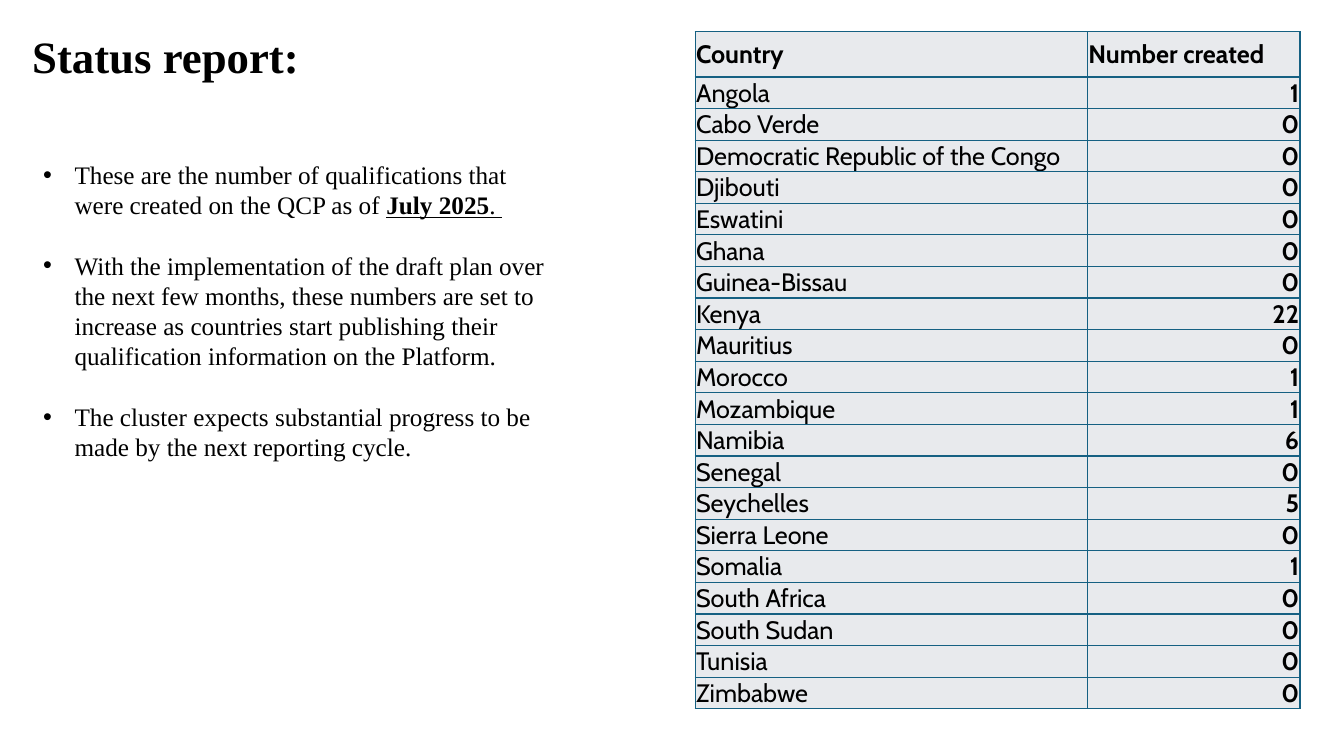
from dataclasses import dataclass
from lxml import etree
from pptx import Presentation
from pptx.dml.color import RGBColor
from pptx.enum import text as t
from pptx.oxml import ns
from pptx.util import Cm, Pt

HEADING = "Status report:"
POINTS = [
    [("These are the number of qualifications that were created on the QCP as of ", False, False),
     ("July 2025", True, True), (". ", False, True)],
    [("With the implementation of the draft plan over the next few months, these numbers "
      "are set to increase as countries start publishing their qualification information "
      "on the Platform.", False, False)],
    [("The cluster expects substantial progress to be made by the next reporting cycle.",
      False, False)],
]
COLUMNS = ("Country", "Number created")
CREATED = {
    "Angola": 1, "Cabo Verde": 0, "Democratic Republic of the Congo": 0, "Djibouti": 0,
    "Eswatini": 0, "Ghana": 0, "Guinea-Bissau": 0, "Kenya": 22, "Mauritius": 0,
    "Morocco": 1, "Mozambique": 1, "Namibia": 6, "Senegal": 0, "Seychelles": 5,
    "Sierra Leone": 0, "Somalia": 1, "South Africa": 0, "South Sudan": 0,
    "Tunisia": 0, "Zimbabwe": 0,
}


@dataclass(frozen=True)
class Theme:
    ink: str = "000000"
    cell: str = "E8EAED"
    border: str = "156082"
    serif: str = "Times New Roman"
    sans: str = "Cabin"
    heading: float = 32
    body: float = 18
    leading: float = 21.6
    border_width: float = 1


THEME = Theme()


def style(run, font, size, bold=False, underline=False):
    run.font.name = font
    run.font.size = Pt(size)
    run.font.bold = bold
    run.font.underline = underline
    run.font.color.rgb = RGBColor.from_string(THEME.ink)


def add_text_frame(slide, left, top, width, height):
    frame = slide.shapes.add_textbox(Cm(left), Cm(top), Cm(width), Cm(height)).text_frame
    frame.word_wrap = True
    return frame


def add_heading(slide):
    frame = add_text_frame(slide, 0.56, 0.15, 8.1, 2.67)
    frame.text = HEADING
    frame.vertical_anchor = t.MSO_ANCHOR.MIDDLE
    heading = frame.paragraphs[0]
    heading.line_spacing = 0.9
    style(heading.runs[0], THEME.serif, THEME.heading, bold=True)


def add_bullet(paragraph, indent):
    properties = paragraph._p.get_or_add_pPr()
    properties.set("marL", str(indent))
    properties.set("indent", str(-indent))
    etree.SubElement(properties, ns.qn("a:buFont"), typeface="Arial")
    etree.SubElement(properties, ns.qn("a:buChar"), char="•")


def add_points(slide):
    frame = add_text_frame(slide, 0.84, 3.89, 13.46, 10.26)
    for index, pieces in enumerate(POINTS):
        point = frame.paragraphs[0] if index == 0 else frame.add_paragraph()
        point.line_spacing = Pt(THEME.leading)
        point.space_before = Pt(THEME.leading if index else 0)
        add_bullet(point, Cm(0.79))
        for words, bold, underline in pieces:
            run = point.add_run()
            run.text = words
            style(run, THEME.serif, THEME.body, bold, underline)


def add_borders(cell):
    properties = cell._tc.get_or_add_tcPr()
    for index, side in enumerate(("lnL", "lnR", "lnT", "lnB")):
        line = etree.Element(ns.qn(f"a:{side}"), w=str(Pt(THEME.border_width)))
        fill = etree.SubElement(line, ns.qn("a:solidFill"))
        etree.SubElement(fill, ns.qn("a:srgbClr"), val=THEME.border)
        properties.insert(index, line)


def fill_cell(cell, words, anchor, align, bold):
    cell.margin_left = cell.margin_right = cell.margin_top = Cm(0.02)
    cell.margin_bottom = 0
    cell.vertical_anchor = anchor
    cell.fill.solid()
    cell.fill.fore_color.rgb = RGBColor.from_string(THEME.cell)
    add_borders(cell)
    cell.text = words
    paragraph = cell.text_frame.paragraphs[0]
    paragraph.alignment = align
    style(paragraph.runs[0], THEME.sans, THEME.body, bold)


def add_country_table(slide):
    widths, height, header_height = (9.89, 5.35), 17.07, 1.14
    rows = [COLUMNS, *CREATED.items()]
    table = slide.shapes.add_table(len(rows), len(COLUMNS), Cm(17.52), Cm(0.8),
                                   Cm(sum(widths)), Cm(height)).table
    table.first_row = table.horz_banding = False
    for column, width in zip(table.columns, widths):
        column.width = Cm(width)
    for r, values in enumerate(rows):
        header = r == 0
        table.rows[r].height = Cm(header_height if header
                                  else (height - header_height) / len(CREATED))
        anchor = t.MSO_ANCHOR.MIDDLE if header else t.MSO_ANCHOR.BOTTOM
        for c, value in enumerate(values):
            is_count = c == 1 and not header
            align = t.PP_ALIGN.RIGHT if is_count else t.PP_ALIGN.LEFT
            fill_cell(table.cell(r, c), str(value), anchor, align, header or is_count)


def main():
    deck = Presentation()
    deck.slide_width, deck.slide_height = Cm(33.87), Cm(19.05)
    slide = deck.slides.add_slide(deck.slide_layouts[6])
    add_heading(slide)
    add_country_table(slide)
    add_points(slide)
    deck.save("out.pptx")


if __name__ == "__main__":
    main()
